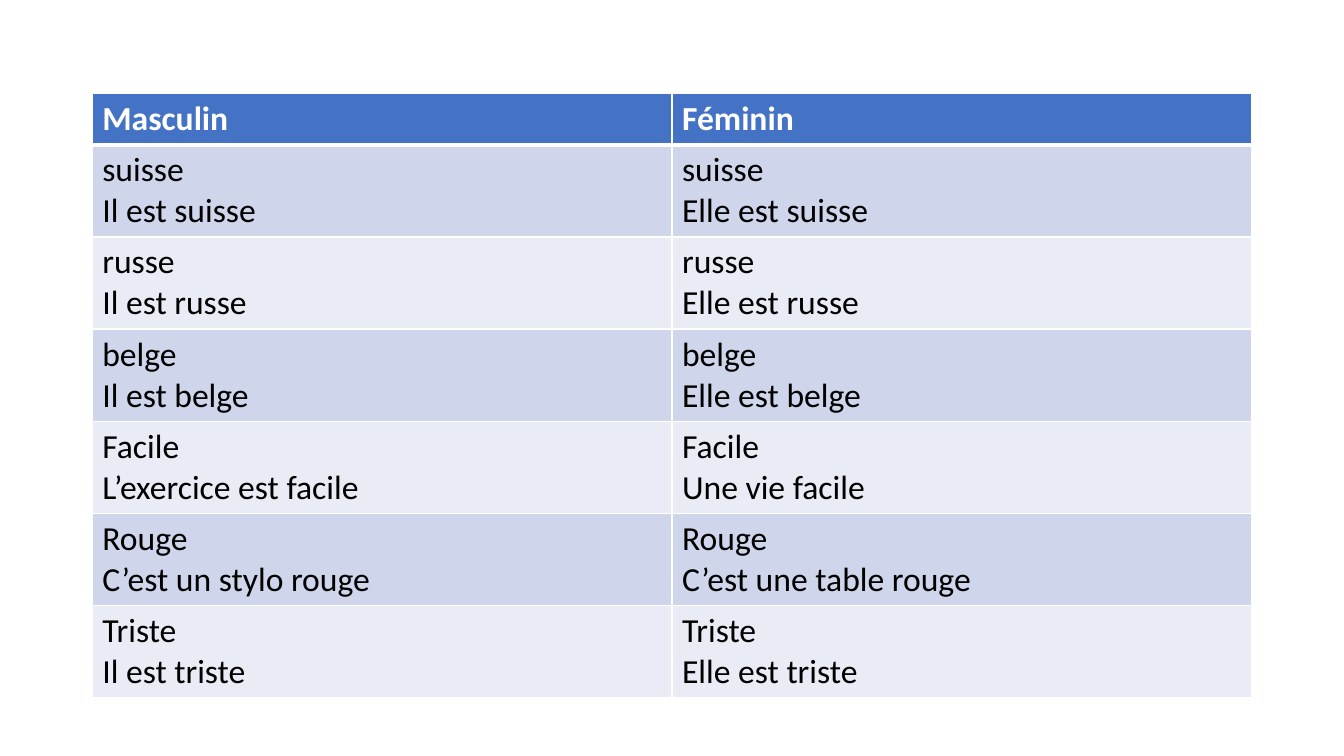
from dataclasses import dataclass

from lxml.etree import SubElement
from pptx import Presentation
from pptx.dml.color import RGBColor
from pptx.oxml.ns import qn
from pptx.table import _Cell
from pptx.util import Inches, Pt

WHITE, BLACK, BLUE = "FFFFFF", "000000", "4472C4"
BANDS = ("CFD5EA", "E9EBF5")
WIDE, HIGH = 13.33, 7.5
TOP, WIDTH = 0.93, 11.5
LEFT = (WIDE - WIDTH) / 2
HEAD, BODY = 0.5, 0.91


@dataclass
class Pair:
    word: str
    male: str
    female: str


PAIRS = [
    Pair("suisse", "Il est suisse", "Elle est suisse"),
    Pair("russe", "Il est russe", "Elle est russe"),
    Pair("belge", "Il est belge", "Elle est belge"),
    Pair("Facile", "L’exercice est facile", "Une vie facile"),
    Pair("Rouge", "C’est un stylo rouge", "C’est une table rouge"),
    Pair("Triste", "Il est triste", "Elle est triste"),
]


def color(code: str) -> RGBColor:
    return RGBColor.from_string(code)


def border(cell: _Cell, side: str, points: float) -> None:
    """Add one white edge; must run before the cell is filled."""
    props = cell._tc.get_or_add_tcPr()
    line = SubElement(props, qn(f"a:ln{side}"), w=str(Pt(points)))
    fill = SubElement(line, qn("a:solidFill"))
    SubElement(fill, qn("a:srgbClr"), val=WHITE)


def dress(cell: _Cell, text: str, fill: str, head: bool) -> None:
    """Write and format a cell of the heading or the body."""
    for side in "LRTB":
        border(cell, side, 3 if head and side == "B" else 1)
    cell.fill.solid()
    cell.fill.fore_color.rgb = color(fill)
    cell.text_frame.text = text
    for para in cell.text_frame.paragraphs:
        for run in para.runs:
            run.font.name = "Calibri"
            run.font.size = Pt(24)
            run.font.bold = head
            run.font.color.rgb = color(WHITE if head else BLACK)


def main() -> None:
    deck = Presentation()
    deck.slide_width, deck.slide_height = Inches(WIDE), Inches(HIGH)
    slide = deck.slides.add_slide(deck.slide_layouts[6])

    rows = [("Masculin", "Féminin")]
    rows += [(f"{p.word}\n{p.male}", f"{p.word}\n{p.female}") for p in PAIRS]
    height = HEAD + BODY * len(PAIRS)
    table = slide.shapes.add_table(
        len(rows), 2, Inches(LEFT), Inches(TOP), Inches(WIDTH), Inches(height)
    ).table
    for row, texts in enumerate(rows):
        head = row == 0
        table.rows[row].height = Inches(HEAD if head else BODY)
        fill = BLUE if head else BANDS[(row - 1) % 2]
        for col, text in enumerate(texts):
            dress(table.cell(row, col), text, fill, head)

    deck.save("out.pptx")


if __name__ == "__main__":
    main()
